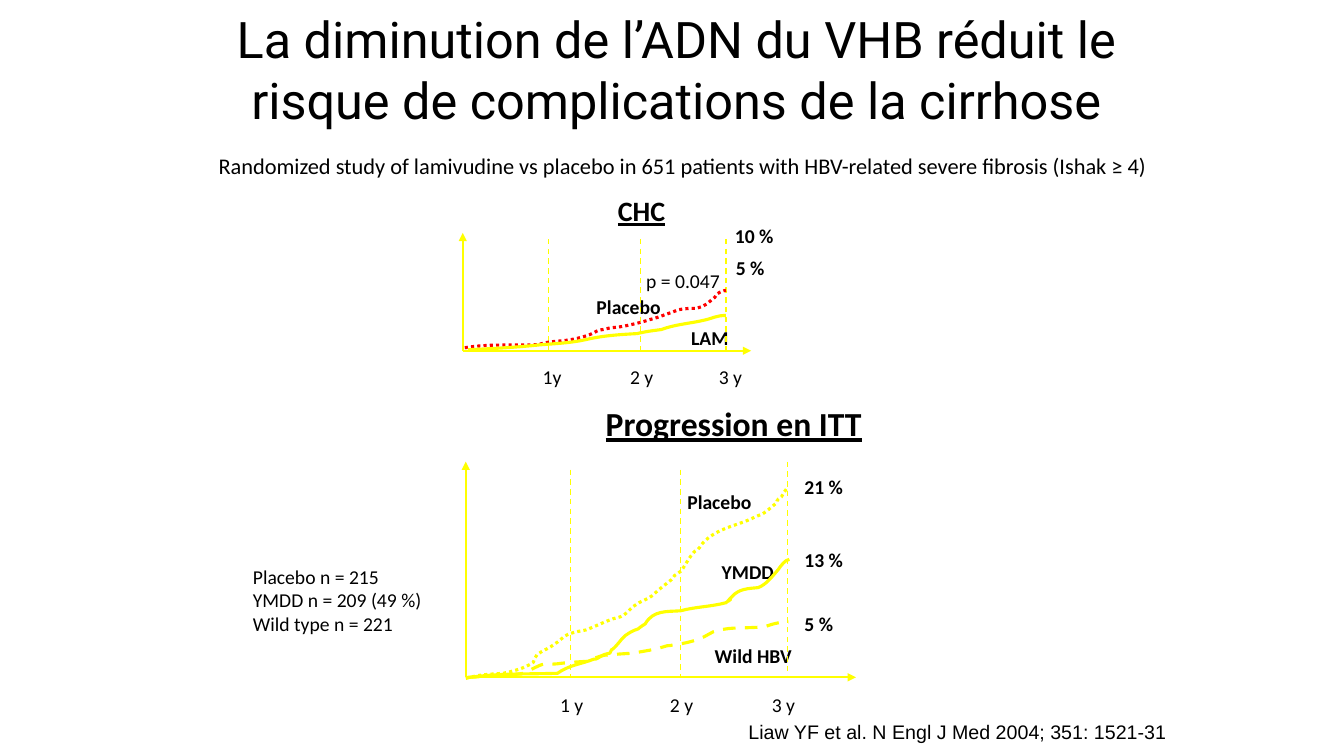
from dataclasses import dataclass

from lxml import etree
from pptx import Presentation
from pptx.dml.color import RGBColor
from pptx.enum.dml import MSO_LINE
from pptx.enum.shapes import MSO_CONNECTOR
from pptx.enum.text import MSO_ANCHOR, MSO_AUTO_SIZE, PP_ALIGN
from pptx.oxml.ns import qn
from pptx.util import Pt

PX = 9144
LEFT, MID, RIGHT = PP_ALIGN.LEFT, PP_ALIGN.CENTER, PP_ALIGN.RIGHT
DASH, DOT = MSO_LINE.DASH, MSO_LINE.ROUND_DOT
STRAIGHT = MSO_CONNECTOR.STRAIGHT
MIDDLE = MSO_ANCHOR.MIDDLE
GROW, FIXED = MSO_AUTO_SIZE.SHAPE_TO_FIT_TEXT, MSO_AUTO_SIZE.NONE


@dataclass
class Theme:
    ink: RGBColor = RGBColor(0, 0, 0)
    yellow: RGBColor = RGBColor(255, 255, 0)
    red: RGBColor = RGBColor(255, 0, 0)
    body: str = "Calibri"
    head: str = "Roboto"
    cite: str = "Arial"
    title: int = 36
    big: int = 24
    mid: int = 20
    lead: int = 16
    small: int = 14
    axis: float = 1.5
    guide: float = 1
    curve: float = 2.25


class Board:
    """Draws text, axes and curves on one slide in a shared style."""

    def __init__(self, slide, theme):
        self.slide, self.theme = slide, theme

    def place(self, shape, x, y, w, h):
        spots = {"left": x, "top": y, "width": w, "height": h}
        for name, value in spots.items():
            setattr(shape, name, value * PX)

    def letter(self, frame, text, align, **style):
        base = {"name": self.theme.body, "size": self.theme.small, "bold": False}
        style = {**base, **style}
        style["size"] = Pt(style["size"])
        frame.text = text
        for para in frame.paragraphs:
            para.alignment = align
            for run in para.runs:
                run.font.color.rgb = self.theme.ink
                for name, value in style.items():
                    setattr(run.font, name, value)

    def title(self, text, x, y, w, h):
        shape = self.slide.shapes.title
        self.place(shape, x, y, w, h)
        frame = shape.text_frame
        self.letter(frame, text, MID, name=self.theme.head, size=self.theme.title)
        traits = {"vertical_anchor": MIDDLE, "auto_size": FIXED, "word_wrap": True}
        for name, value in traits.items():
            setattr(frame, name, value)

    def text(self, text, x, y, w, h=33, align=LEFT, wrap=True, **style):
        box = self.slide.shapes.add_textbox(*(n * PX for n in (x, y, w, h)))
        frame = box.text_frame
        self.letter(frame, text, align, **style)
        frame.word_wrap, frame.auto_size = wrap, GROW

    def stroke(self, shape, color, width, dash=None):
        shape.line.color.rgb = color
        shape.line.width = Pt(width)
        if dash:
            shape.line.dash_style = dash

    def line(self, x1, y1, x2, y2, width, dash=None, arrow=False):
        ends = (n * PX for n in (x1, y1, x2, y2))
        link = self.slide.shapes.add_connector(STRAIGHT, *ends)
        self.stroke(link, self.theme.yellow, width, dash)
        props = link._element.spPr
        if arrow:
            etree.SubElement(props.find(qn("a:ln")), qn("a:tailEnd"), type="triangle")
        etree.SubElement(props, qn("a:effectLst"))

    def axes(self, x, y, top, right):
        self.line(x, y, x, top, self.theme.axis, arrow=True)
        self.line(x, y, right, y, self.theme.axis, arrow=True)

    def ticks(self, names, lefts, y, w):
        for name, x in zip(names, lefts):
            self.text(name, x, y, w, align=MID)

    def guides(self, spots, base):
        for x, top in spots:
            self.line(x, top, x, base, self.theme.guide, DASH)

    def curve(self, color, dash, start, *bends):
        flat = [n for bend in bends for n in bend]
        pen = self.slide.shapes.build_freeform(*start, scale=PX)
        pen.add_line_segments(list(zip(flat[::2], flat[1::2])), close=False)
        shape = pen.convert_to_shape()
        shape.shadow.inherit = False
        shape.fill.background()
        self.stroke(shape, color, self.theme.curve, dash)
        track = shape._element.find(".//" + qn("a:path"))
        legs = track.findall(qn("a:lnTo"))
        for i in range(0, len(legs), 3):
            bend = etree.SubElement(track, qn("a:cubicBezTo"))
            for leg in legs[i:i + 3]:
                bend.append(leg[0])
                track.remove(leg)


def cancer(board):
    look = board.theme
    board.axes(459, 348, 231, 745)
    board.ticks(("1y", "2 y", "3 y"), (514, 603, 691), 357, 67)
    board.text("Placebo", 575, 288, 97, align=MID, bold=True)
    board.text("LAM", 640, 318, 128, align=MID, bold=True)
    board.text("p = 0.047", 629, 262, 97, align=MID)
    board.text("10 %", 719, 217, 97, bold=True)
    board.text("5 %", 720, 249, 97, bold=True)
    board.guides(((544, 237), (635, 237), (720, 237)), 348)
    board.curve(
        look.red, DOT, (461, 345),
        (486, 341, 506, 343, 534, 342), (543, 339, 549, 339, 559, 338),
        (568, 337, 577, 335, 585, 332), (590, 330, 593, 327, 598, 327),
        (605, 325, 610, 325, 617, 324), (627, 322, 636, 320, 645, 317),
        (653, 315, 660, 312, 666, 310), (669, 309, 673, 307, 675, 307),
        (680, 306, 685, 306, 690, 306), (702, 303, 701, 301, 709, 295),
        (711, 292, 711, 291, 714, 290), (716, 289, 720, 288, 720, 288))
    board.curve(
        look.yellow, None, (464, 347),
        (486, 346, 506, 345, 527, 343), (545, 341, 563, 341, 581, 337),
        (598, 333, 614, 332, 632, 331), (640, 329, 648, 328, 656, 327),
        (669, 322, 684, 321, 697, 318), (707, 316, 710, 313, 720, 313))
    board.text("CHC", 603, 187, 68, 44, wrap=False,
               size=look.mid, bold=True, underline=True)


def progress(board):
    look = board.theme
    board.axes(462, 672, 458, 849)
    board.ticks(("1 y", "2 y", "3 y"), (530, 639, 740), 683, 74)
    board.text("Placebo", 659, 481, 109, align=MID, bold=True)
    for name, x, y in (("21 %", 788, 466), ("13 %", 788, 539), ("5 %", 788, 602),
                       ("YMDD", 706, 551), ("Wild HBV", 699, 634)):
        board.text(name, x, y, 109, bold=True)
    board.guides(((566, 466), (675, 466), (781, 458)), 672)
    board.curve(
        look.yellow, DASH, (463, 672),
        (482, 671, 500, 671, 519, 668), (522, 667, 536, 659, 539, 659),
        (545, 659, 551, 659, 557, 658), (566, 657, 583, 656, 583, 656),
        (589, 653, 594, 651, 600, 650), (610, 649, 628, 648, 628, 648),
        (638, 646, 647, 645, 657, 642), (660, 640, 663, 641, 667, 640),
        (675, 639, 685, 637, 693, 634), (700, 632, 706, 626, 713, 625),
        (733, 622, 718, 624, 758, 622), (766, 619, 773, 617, 782, 617))
    board.curve(
        look.yellow, DOT, (462, 673),
        (476, 669, 484, 669, 499, 668), (508, 666, 521, 663, 529, 657),
        (530, 654, 531, 651, 533, 649), (539, 645, 545, 643, 550, 639),
        (554, 637, 560, 630, 564, 629), (570, 627, 575, 626, 581, 625),
        (589, 622, 597, 618, 605, 615), (609, 613, 615, 613, 619, 610),
        (623, 607, 626, 603, 629, 601), (635, 596, 643, 595, 649, 589),
        (654, 584, 660, 580, 666, 575), (667, 574, 668, 573, 669, 571),
        (671, 570, 676, 566, 676, 566), (680, 560, 684, 552, 689, 547),
        (691, 546, 693, 545, 694, 543), (695, 542, 695, 541, 696, 540),
        (707, 527, 723, 523, 737, 518), (743, 516, 750, 512, 756, 510),
        (761, 507, 765, 503, 770, 499), (770, 498, 771, 496, 772, 495),
        (773, 494, 774, 494, 775, 493), (777, 490, 778, 487, 780, 485),
        (780, 484, 780, 484, 781, 484))
    board.curve(
        look.yellow, None, (466, 672),
        (496, 668, 516, 669, 553, 668), (564, 660, 576, 659, 589, 654),
        (590, 654, 592, 654, 593, 653), (595, 652, 596, 651, 598, 650),
        (600, 649, 605, 648, 605, 648), (609, 640, 604, 648, 610, 642),
        (615, 637, 618, 631, 624, 628), (627, 626, 630, 625, 633, 624),
        (635, 622, 640, 619, 640, 619), (648, 605, 662, 607, 675, 606),
        (690, 602, 705, 602, 720, 598), (733, 588, 714, 604, 726, 592),
        (733, 584, 742, 584, 752, 583), (760, 580, 766, 572, 772, 565),
        (774, 562, 779, 555, 783, 555))
    board.text("Progression en ITT", 591, 395, 276, 50, wrap=False,
               size=look.big, bold=True, underline=True)


def main():
    deck = Presentation()
    deck.slide_width, deck.slide_height = 1333 * PX, 750 * PX
    look = Theme()
    board = Board(deck.slides.add_slide(deck.slide_layouts[5]), look)
    board.title("La diminution de l’ADN du VHB réduit le risque de complications "
                "de la cirrhose", 202, 6, 938, 125)
    board.text("Randomized study of lamivudine vs placebo in 651 patients with "
               "HBV-related severe fibrosis (Ishak ≥ 4)", 207, 146, 950, 37,
               size=look.lead)
    cancer(board)
    progress(board)
    board.text("Placebo n = 215\nYMDD n = 209 (49 %)\nWild type n = 221",
               241, 555, 189, 81, wrap=False)
    board.text("Liaw YF et al. N Engl J Med 2004; 351: 1521-31", 597, 709, 570, 34,
               align=RIGHT, name=look.cite)
    deck.save("out.pptx")


if __name__ == "__main__":
    main()
